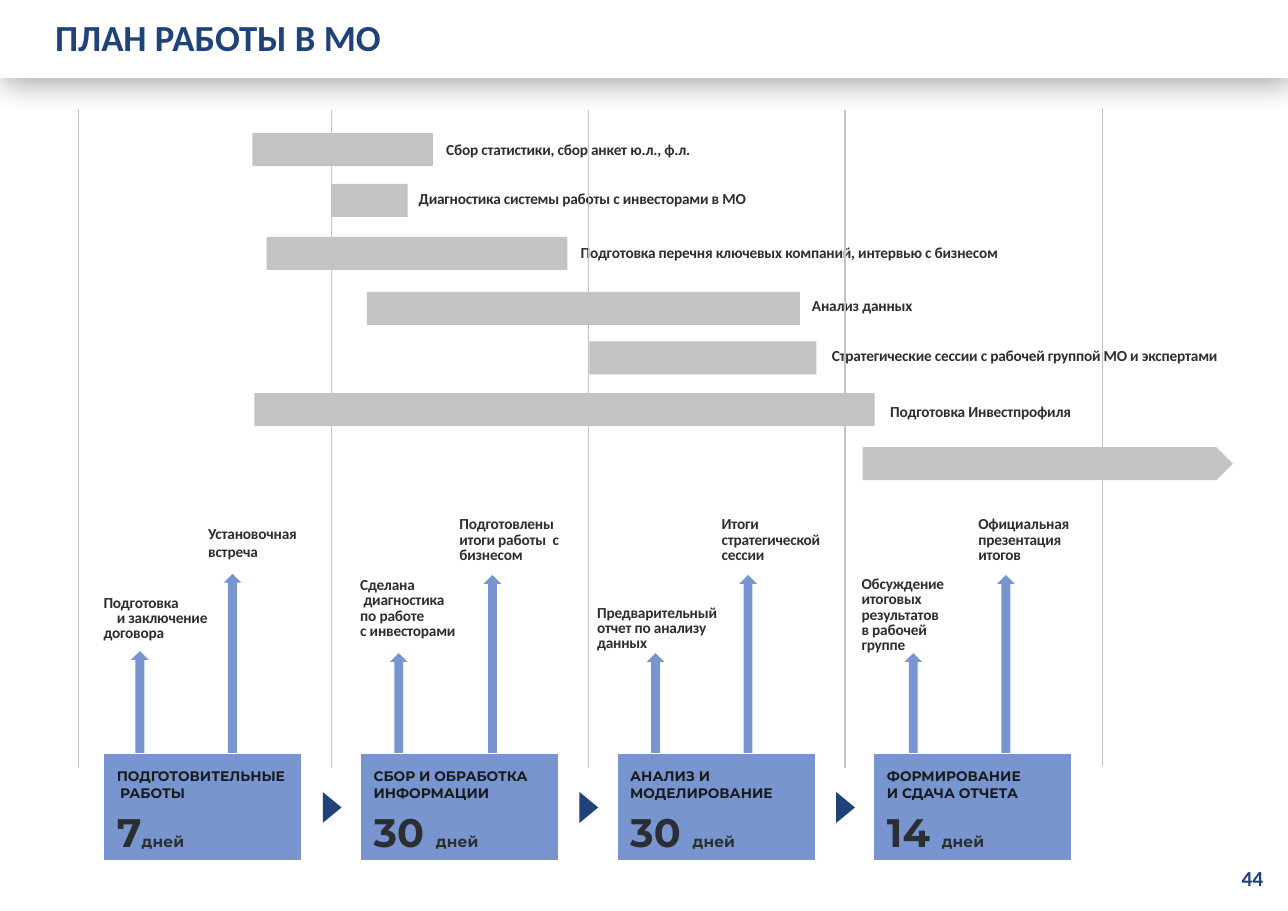
from dataclasses import dataclass

from lxml.etree import SubElement
from pptx import Presentation
from pptx.dml.color import RGBColor
from pptx.enum.shapes import MSO_CONNECTOR, MSO_SHAPE
from pptx.enum.text import MSO_ANCHOR, MSO_AUTO_SIZE, PP_ALIGN
from pptx.oxml.ns import qn
from pptx.util import Inches, Pt

NAVY, BLUE, GREY = "1F427B", "7895D0", "C2C3C3"
DARK, BLACK, WHITE = "2B2F32", "171B1E", "FFFFFF"
STEP = 2.33


@dataclass
class Task:
    left: float
    top: float
    width: float
    text: str = ""
    text_left: float = 0
    text_top: float = 0
    text_width: float = 0
    shape: MSO_SHAPE = MSO_SHAPE.RECTANGLE


@dataclass
class Milestone:
    arrow_left: float
    arrow_top: float
    text: str
    text_left: float
    text_top: float
    indent: float = 0
    spacing: float | None = 10


@dataclass
class Stage:
    name: str
    days: str
    indent: float = 0


@dataclass
class GridLine:
    x: float
    top: float = 1
    bottom: float = 6.97
    color: str = GREY
    width: float = 0.75


TASKS = [
    Task(2.29, 1.21, 1.64, "Сбор статистики, сбор анкет ю.л., ф.л.", 4.05, 1.23, 2.62),
    Task(3.01, 1.67, 0.69, "Диагностика системы работы с инвесторами в МО", 3.8, 1.68, 3.65),
    Task(2.42, 2.15, 2.73, "Подготовка перечня ключевых компаний, интервью с бизнесом",
         5.27, 2.17, 5),
    Task(3.33, 2.65, 3.93, "Анализ данных", 7.37, 2.65, 3.36),
    Task(5.35, 3.1, 2.06, "Стратегические сессии с рабочей группой МО и экспертами",
         7.55, 3.1, 4.14),
    Task(2.31, 3.57, 5.63, "Подготовка Инвестпрофиля", 8.08, 3.61, 2.65),
    Task(7.83, 4.06, 3.36, shape=MSO_SHAPE.PENTAGON),
]
MILESTONES = [
    Milestone(1.19, 5.91, "Подготовка\nи заключение\nдоговора", 0.94, 5.4, 0.12),
    Milestone(2.03, 5.21, "Установочная\nвстреча", 1.89, 4.75, spacing=None),
    Milestone(3.54, 5.93, "Сделана\nдиагностика\nпо работе\nс инвесторами", 3.27, 5.21, 0.03),
    Milestone(4.39, 5.22, "Подготовлены\nитоги работы  с\nбизнесом", 4.17, 4.66),
    Milestone(5.87, 5.93, "Предварительный\nотчет по анализу\nданных", 5.42, 5.46),
    Milestone(6.71, 5.22, "Итоги\nстратегической\nсессии", 6.55, 4.66),
    Milestone(8.21, 5.93, "Обсуждение\nитоговых\nрезультатов\nв рабочей\nгруппе", 7.82, 5.2),
    Milestone(9.05, 5.22, "Официальная\nпрезентация\nитогов", 8.88, 4.66),
]
STAGES = [
    Stage("ПОДГОТОВИТЕЛЬНЫЕ\nРАБОТЫ", "7", 0.03),
    Stage("СБОР И ОБРАБОТКА\nИНФОРМАЦИИ", "30 "),
    Stage("АНАЛИЗ И\nМОДЕЛИРОВАНИЕ", "30 "),
    Stage("ФОРМИРОВАНИЕ\nИ СДАЧА ОТЧЕТА", "14 "),
]
OUTER_LINES = [GridLine(0.71), GridLine(0.71, 1, 6.84, "BCBEC0", 0.5),
               GridLine(3.01), GridLine(10.01, 0.98, 6.95)]
INNER_LINES = [GridLine(3.01 + STEP * i) for i in (1, 2)]


def rgb(color: str) -> RGBColor:
    return RGBColor.from_string(color)


def format_run(r, size: float, color: str, font: str = "Calibri", spacing: float = 0) -> None:
    r.font.name, r.font.size, r.font.bold = font, Pt(size), True
    r.font.color.rgb = rgb(color)
    if spacing:
        r.font._element.set("spc", str(round(spacing * 100)))


def indent(p, inches: float) -> None:
    pPr = p._p.get_or_add_pPr()
    pPr.set("marL", str(Inches(inches)))
    pPr.set("indent", "0")


def fill(sp, color: str) -> None:
    sp.shadow.inherit = False
    sp.fill.solid()
    sp.fill.fore_color.rgb = rgb(color)
    sp.line.fill.background()


def add_box(s, shape: MSO_SHAPE, left: float, top: float, width: float, height: float,
            color: str):
    sp = s.shapes.add_shape(shape, Inches(left), Inches(top), Inches(width), Inches(height))
    fill(sp, color)
    return sp


def set_margins(tf, top: float) -> None:
    tf.margin_left = tf.margin_right = tf.margin_bottom = 0
    tf.margin_top = Inches(top)


def add_label(s, text: str, left: float, top: float, width: float, height: float,
              size: float = 10, color: str = DARK, inset: float = 0.04):
    sp = s.shapes.add_textbox(Inches(left), Inches(top), Inches(width), Inches(height))
    tf = sp.text_frame
    tf.word_wrap = True
    set_margins(tf, inset)
    tf.text = text
    for p in tf.paragraphs:
        format_run(p.runs[0], size, color, spacing=-0.1)
    return tf


def add_grid_line(s, g: GridLine) -> None:
    line = s.shapes.add_connector(MSO_CONNECTOR.STRAIGHT, Inches(g.x), Inches(g.top),
                                  Inches(g.x), Inches(g.bottom))
    line.line.color.rgb = rgb(g.color)
    line.line.width = Pt(g.width)
    SubElement(line._element.spPr, qn("a:effectLst"))


def add_milestone(s, m: Milestone) -> None:
    add_box(s, MSO_SHAPE.UP_ARROW, m.arrow_left, m.arrow_top, 0.16, 6.97 - m.arrow_top, BLUE)
    inset = 0.04 if m.spacing and m.arrow_left > 3 else 0.01
    tf = add_label(s, m.text, m.text_left, m.text_top, 1.43, 0.47, inset=inset)
    for p in tf.paragraphs:
        if m.spacing:
            p.line_spacing = Pt(m.spacing)
    indent(tf.paragraphs[1], m.indent)


def add_stage(s, stage: Stage, left: float) -> None:
    table = s.shapes.add_table(1, 1, Inches(left), Inches(6.84), Inches(1.8),
                               Inches(0.97)).table
    table.first_row = table.horz_banding = False
    cell = table.cell(0, 0)
    cell.fill.solid()
    cell.fill.fore_color.rgb = rgb(BLUE)
    set_margins(cell, 0.13)
    tf = cell.text_frame
    tf.text = stage.name
    for p, extra in zip(tf.paragraphs, (0, stage.indent)):
        indent(p, 0.12 + extra)
        format_run(p.runs[0], 9, BLACK, "Montserrat")
    p = tf.add_paragraph()
    indent(p, 0.12)
    p.space_before = Pt(12)
    p.line_spacing = Pt(24.6)
    for text, size in ((stage.days, 26), ("дней", 10)):
        r = p.add_run()
        r.text = text
        format_run(r, size, DARK, "Montserrat", 0.1)


def add_pointer(s, left: float) -> None:
    top, width, height = 7.19, 0.17, 0.28
    outline = s.shapes.build_freeform(Inches(left), Inches(top))
    outline.add_line_segments([(Inches(left + width), Inches(top + height / 2)),
                               (Inches(left), Inches(top + height))])
    fill(outline.convert_to_shape(), NAVY)


def add_header(s, text: str) -> None:
    sp = add_box(s, MSO_SHAPE.RECTANGLE, 0, 0, 11.69, 0.71, WHITE)
    shadow = SubElement(sp._element.spPr.find(qn("a:effectLst")), qn("a:outerShdw"),
                        blurRad=str(Pt(22)), dist=str(Pt(3)), dir="2700000", rotWithShape="0")
    color = SubElement(shadow, qn("a:srgbClr"), val="000000")
    SubElement(color, qn("a:alpha"), val="40000")
    title = s.shapes.title
    s.shapes.element.append(title.element)
    title.left, title.top = Inches(0.49), Inches(0.12)
    title.width, title.height = Inches(11.19), Inches(0.42)
    tf = title.text_frame
    tf.text = text
    tf.auto_size = MSO_AUTO_SIZE.NONE
    tf.vertical_anchor = MSO_ANCHOR.TOP
    set_margins(tf, 0.01)
    p = tf.paragraphs[0]
    p.alignment = PP_ALIGN.LEFT
    p.space_before = Pt(0)
    indent(p, 0.01)
    format_run(p.runs[0], 24, NAVY)


def main() -> None:
    prs = Presentation()
    prs.slide_width, prs.slide_height = Inches(11.69), Inches(8.27)
    s = prs.slides.add_slide(prs.slide_layouts[5])
    for m in MILESTONES:
        add_milestone(s, m)
    for t in TASKS:
        if t.text:
            add_label(s, t.text, t.text_left, t.text_top, t.text_width, 0.2)
    for g in OUTER_LINES:
        add_grid_line(s, g)
    for t in TASKS:
        add_box(s, t.shape, t.left, t.top, t.width, 0.3, GREY)
    for g in INNER_LINES:
        add_grid_line(s, g)
    for i, stage in enumerate(STAGES):
        add_stage(s, stage, 0.94 + STEP * i)
        if i:
            add_pointer(s, 0.6 + STEP * i)
    add_header(s, "ПЛАН РАБОТЫ В МО")
    add_label(s, "44", 11.27, 7.8, 0.4, 0.4, 14, NAVY, 0.05)
    prs.save("out.pptx")


if __name__ == "__main__":
    main()
